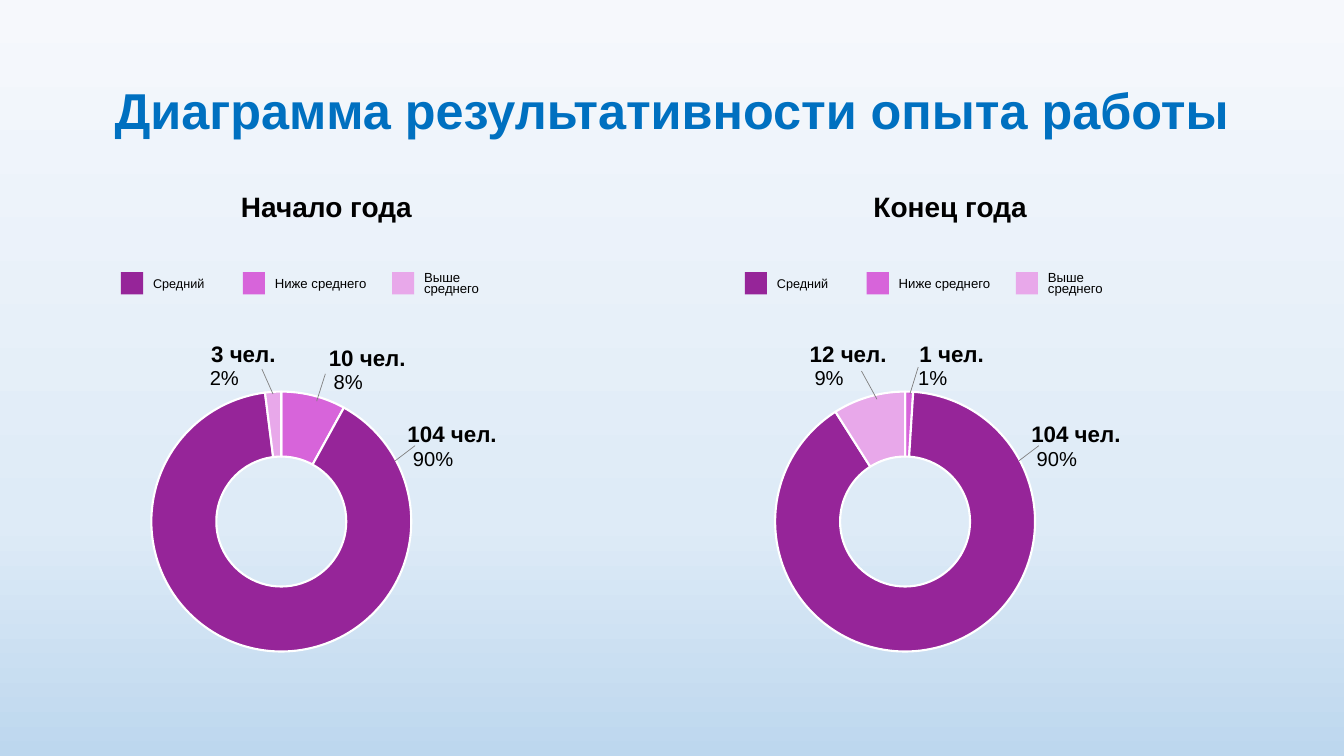
from lxml.etree import SubElement
from pptx import Presentation
from pptx.chart.data import CategoryChartData
from pptx.dml.color import RGBColor
from pptx.enum.chart import XL_CHART_TYPE as ChartType
from pptx.enum.shapes import MSO_CONNECTOR as Connector, MSO_SHAPE as Shape
from pptx.enum.text import MSO_ANCHOR as Anchor, MSO_AUTO_SIZE as AutoSize, PP_ALIGN as Align
from pptx.oxml import parse_xml
from pptx.oxml.ns import nsdecls, qn
from pptx.util import Cm, Pt

BLUE = RGBColor(0x00, 0x70, 0xC0)
BLACK = RGBColor(0x00, 0x00, 0x00)
WHITE = RGBColor(0xFF, 0xFF, 0xFF)
GRAY = RGBColor(0x80, 0x80, 0x80)
PURPLE = RGBColor(0x96, 0x25, 0x99)
ORCHID = RGBColor(0xD7, 0x64, 0xDA)
PINK = RGBColor(0xE8, 0xA8, 0xEA)
BACKDROP = [
    (0, RGBColor(0xF6, 0xF8, 0xFC)),
    (69, RGBColor(0xDE, 0xEB, 0xF7)),
    (100, RGBColor(0xBD, 0xD7, 0xEE)),
]

HEADING = "Диаграмма результативности опыта работы"
LEGEND = [
    ("Средний", PURPLE, 3.05, 6.81, 9, 0.9),
    ("Ниже среднего", ORCHID, 6.12, 6.83, 9.4, 0.7),
    ("Выше среднего", PINK, 9.88, 6.81, 9.4, 0.7),
]
SLICE_COLORS = [ORCHID, PURPLE, PINK]
PERIODS = [
    ("Начало года", [
        ("10 чел.", 8, (7.82, 8.69), (8.2, 9.42, 7.98, 10.11)),
        ("104 чел.", 90, (9.96, 10.62), (10.46, 11.23, 9.96, 11.61)),
        ("3 чел.", 2, (4.7, 8.59), (6.6, 9.3, 6.88, 9.93)),
    ]),
    ("Конец года", [
        ("1 чел.", 1, (6.83, 8.59), (7.42, 9.25, 7.21, 9.93)),
        ("104 чел.", 90, (9.96, 10.62), (10.46, 11.23, 9.96, 11.61)),
        ("12 чел.", 9, (4.22, 8.59), (5.99, 9.35, 6.38, 10.06)),
    ]),
]
PERIOD_STEP = 15.72
LABEL_SIZE = (2.87, 0.71)
SWATCH = 0.56
RING_SHARE = (0.6, 0.9)


def write(text, *, frame=None, box=None, size=16, color=BLACK, bold=False,
          align=Align.CENTER, spacing=0.9):
    if frame is None:
        frame = slide.shapes.add_textbox(*map(Cm, box)).text_frame
    frame.word_wrap = True
    frame.auto_size = AutoSize.NONE
    frame.vertical_anchor = Anchor.MIDDLE
    paragraph = frame.paragraphs[0]
    paragraph.alignment = align
    paragraph.line_spacing = spacing
    run = paragraph.add_run()
    run.text = text
    run.font.name = "Arial"
    run.font.size = Pt(size)
    run.font.bold = bold
    run.font.color.rgb = color


def paint_background():
    fill = slide.background.fill
    fill.gradient()
    fill.gradient_angle = 270
    stops = slide.element.find(".//" + qn("a:gsLst"))
    for stop in list(stops):
        stops.remove(stop)
    for percent, color in BACKDROP:
        stop = SubElement(stops, qn("a:gs"), pos=str(percent * 1000))
        SubElement(stop, qn("a:srgbClr"), val=str(color))


def draw_ring(left, shares):
    data = CategoryChartData()
    data.categories = ["1", "2", "3"]
    data.add_series("Series 1", shares)
    ring = slide.shapes.add_chart(ChartType.DOUGHNUT, Cm(left), Cm(9.5),
                                  Cm(10.92), Cm(7.29), data).chart
    ring.has_legend = False
    ring.has_title = False
    ring.font.name = "Calibri"
    ring.font.size = Pt(10)
    ring.font.color.rgb = BLACK
    plot = ring.plots[0]
    plot.vary_by_categories = True
    plot.has_data_labels = False
    for index, color in enumerate(SLICE_COLORS):
        part = plot.series[0].points[index].format
        part.fill.solid()
        part.fill.fore_color.rgb = color
        part.line.color.rgb = WHITE
        part.line.width = Pt(1.5)
    area = ring.element.find(".//" + qn("c:plotArea"))
    area.find(".//" + qn("c:holeSize")).set("val", "70")
    for old in area.findall(qn("c:layout")):
        area.remove(old)
    wide, high = RING_SHARE
    area.insert(0, parse_xml(
        f'<c:layout {nsdecls("c")}><c:manualLayout><c:layoutTarget val="inner"/>'
        f'<c:xMode val="edge"/><c:yMode val="edge"/>'
        f'<c:x val="{(1 - wide) / 2:.2f}"/><c:y val="{(1 - high) / 2:.2f}"/>'
        f'<c:w val="{wide}"/><c:h val="{high}"/></c:manualLayout></c:layout>'))


def draw_callout(shift, count, share, place, leader):
    x, y = place[0] + shift, place[1]
    write(count, box=(x, y, *LABEL_SIZE), bold=True)
    write(f"{share}%", box=(x - 0.48, y + 0.65, *LABEL_SIZE), size=14.4, spacing=0.7)
    x1, y1, x2, y2 = leader
    line = slide.shapes.add_connector(Connector.STRAIGHT, Cm(x1 + shift), Cm(y1),
                                      Cm(x2 + shift), Cm(y2))
    line.line.color.rgb = GRAY
    line.line.width = Pt(0.5)
    SubElement(line.element.spPr, qn("a:effectLst"))


def draw_legend(shift):
    for level, color, x, text_top, size, spacing in LEGEND:
        swatch = slide.shapes.add_shape(Shape.RECTANGLE, Cm(x + shift), Cm(6.86),
                                        Cm(SWATCH), Cm(SWATCH))
        swatch.shadow.inherit = False
        swatch.fill.solid()
        swatch.fill.fore_color.rgb = color
        swatch.line.fill.background()
        write(level, box=(x + shift + SWATCH, text_top, *LABEL_SIZE), size=size,
              align=Align.LEFT, spacing=spacing)


deck = Presentation()
deck.slide_width, deck.slide_height = Cm(33.87), Cm(19.05)
slide = deck.slides.add_slide(deck.slide_layouts[5])
paint_background()

heading = slide.shapes.title
heading.left, heading.top, heading.width, heading.height = map(Cm, (2.33, 1.01, 29.21, 3.68))
write(HEADING, frame=heading.text_frame, size=36, color=BLUE, bold=True)

for number, (period, groups) in enumerate(PERIODS):
    shift = number * PERIOD_STEP
    draw_ring(1.63 + shift, [share for _, share, _, _ in groups])
    write(period, box=(5.61 + shift, 4.6, 5.23, 1.32), size=20, bold=True)
    for group in groups:
        draw_callout(shift, *group)
    draw_legend(shift)

deck.save("out.pptx")
